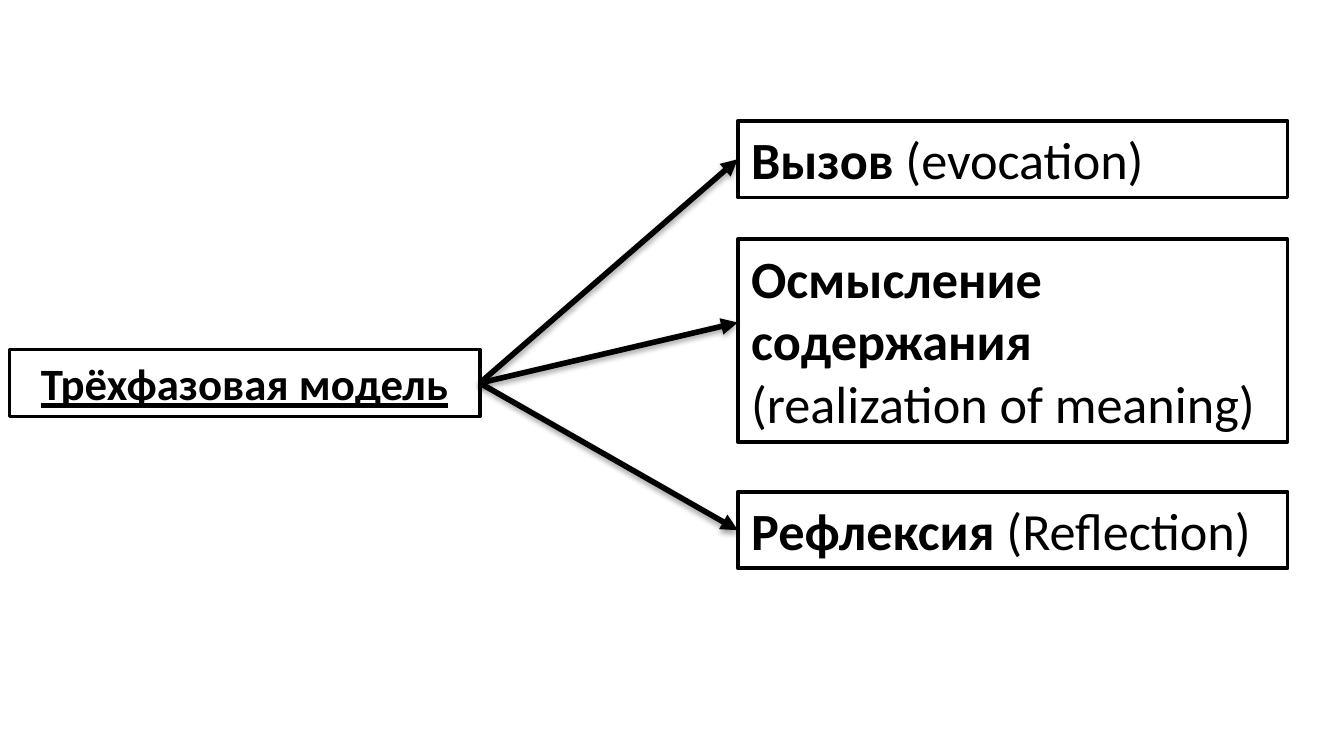
from lxml.etree import SubElement
from pptx import Presentation
from pptx.dml.color import RGBColor
from pptx.enum.shapes import MSO_CONNECTOR, MSO_SHAPE
from pptx.enum.text import MSO_ANCHOR, MSO_AUTO_SIZE, PP_ALIGN
from pptx.oxml.ns import qn
from pptx.util import Inches, Pt

BLACK = RGBColor(0, 0, 0)
WHITE = RGBColor(255, 255, 255)
WIDTH = Inches(10)
HEIGHT = WIDTH * 9 // 16
LEFT_SIDE, RIGHT_SIDE = 1, 3
MODEL_BOX = (0.07, 2.6, 3.5, 0.5)
PHASE_LEFT, PHASE_WIDTH = 5.49, 4.09
PHASES = [
    ("Вызов ", "(evocation)", 0.9, 0.57, PP_ALIGN.LEFT, None),
    ("Осмысление содержания ", "(realization of meaning)", 1.78, 1.51, PP_ALIGN.JUSTIFY, 2.4),
    ("Рефлексия ", "(Reflection)", 3.66, 0.57, PP_ALIGN.LEFT, None),
]


def place(shape, box):
    """Give a shape its box, in inches."""
    for name, value in zip(("left", "top", "width", "height"), box):
        setattr(shape, name, Inches(value))


def fill_box(shape, spans, size, align, fit):
    """Outline a box and write its spans, given as (text, font values)."""
    shape.fill.solid()
    shape.fill.fore_color.rgb = WHITE
    shape.line.color.rgb = BLACK
    shape.line.width = Pt(2)
    frame = shape.text_frame
    frame.word_wrap = True
    frame.auto_size = fit
    frame.vertical_anchor = MSO_ANCHOR.TOP
    para = frame.paragraphs[0]
    para.alignment = align
    for text, extra in spans:
        span = para.add_run()
        span.text = text
        span.font.color.rgb = BLACK
        for name, value in {"name": "Calibri", "size": Pt(size), **extra}.items():
            setattr(span.font, name, value)


def add_model(page, box):
    """Place the title as the model's box."""
    title = page.shapes.title
    place(title, box)
    spans = [("Трёхфазовая модель", {"bold": True, "underline": True})]
    fill_box(title, spans, 24, PP_ALIGN.CENTER, MSO_AUTO_SIZE.NONE)
    return title


def add_phase(page, box, name, term, align):
    """Add one phase with its bold name and English term."""
    phase = page.shapes.add_shape(MSO_SHAPE.RECTANGLE, *map(Inches, box))
    phase.shadow.inherit = False
    spans = [(name, {"bold": True}), (term, {"bold": False})]
    fill_box(phase, spans, 28, align, MSO_AUTO_SIZE.SHAPE_TO_FIT_TEXT)
    return phase


def add_arrow(page, model, phase, end_height):
    """Lead an arrow from the model to a phase's side, at its middle unless a height is given."""
    start = (model.left + model.width, model.top + model.height // 2)
    end = (phase.left, Inches(end_height or 0))
    arrow = page.shapes.add_connector(MSO_CONNECTOR.STRAIGHT, *start, *end)
    arrow.begin_connect(model, RIGHT_SIDE)
    if end_height is None:
        arrow.end_connect(phase, LEFT_SIDE)
    arrow.line.color.rgb = BLACK
    arrow.line.width = Pt(3)
    properties = arrow._element.spPr
    SubElement(properties.find(qn("a:ln")), qn("a:tailEnd"), type="triangle")
    effects = SubElement(properties, qn("a:effectLst"))
    shadow = SubElement(effects, qn("a:outerShdw"), blurRad=str(Pt(3.1)),
                        dist=str(Pt(1.8)), dir="5400000", rotWithShape="0")
    color = SubElement(shadow, qn("a:srgbClr"), val=str(BLACK))
    SubElement(color, qn("a:alpha"), val="35000")


def main():
    """Build the slide of the three-phase model."""
    deck = Presentation()
    deck.slide_width, deck.slide_height = WIDTH, HEIGHT
    page = deck.slides.add_slide(deck.slide_layouts.get_by_name("Title Only"))
    model = add_model(page, MODEL_BOX)
    targets = []
    for name, term, top, height, align, end_height in PHASES:
        box = (PHASE_LEFT, top, PHASE_WIDTH, height)
        targets.append((add_phase(page, box, name, term, align), end_height))
    for phase, end_height in targets:
        add_arrow(page, model, phase, end_height)
    deck.save("out.pptx")


if __name__ == "__main__":
    main()
